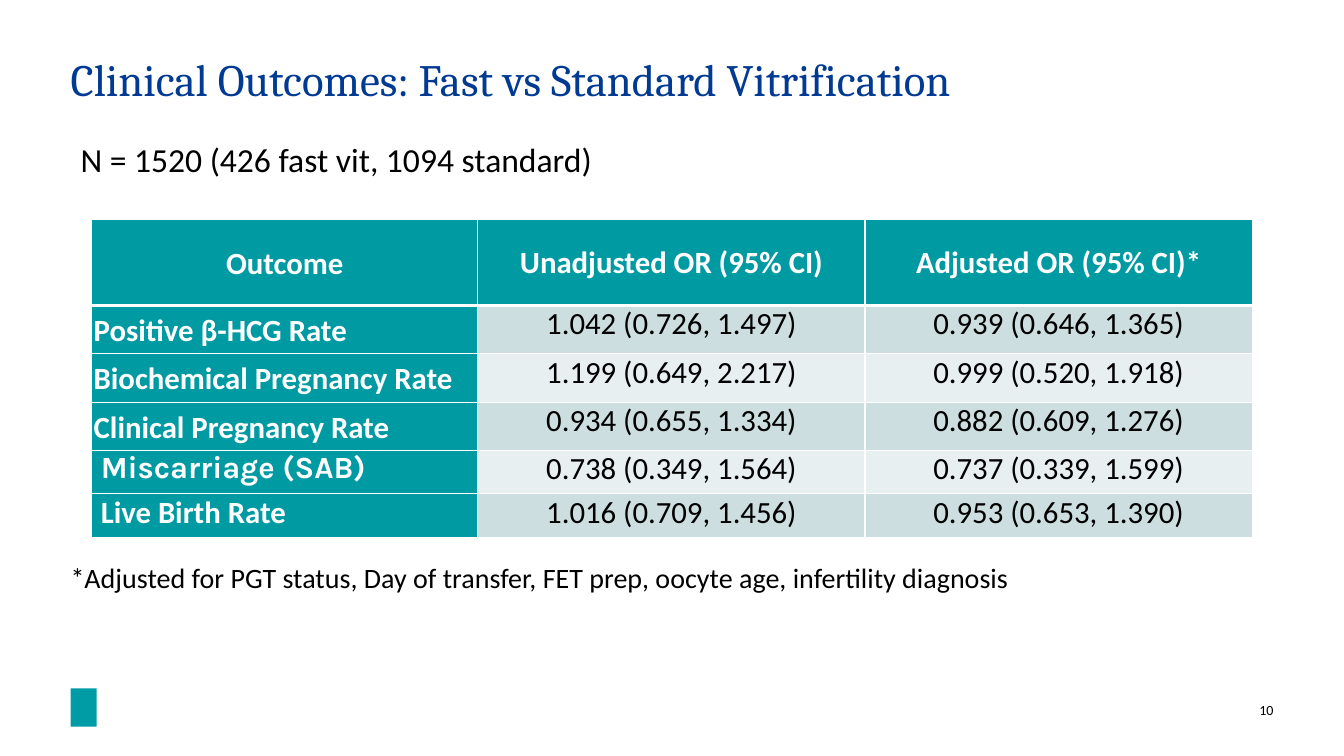
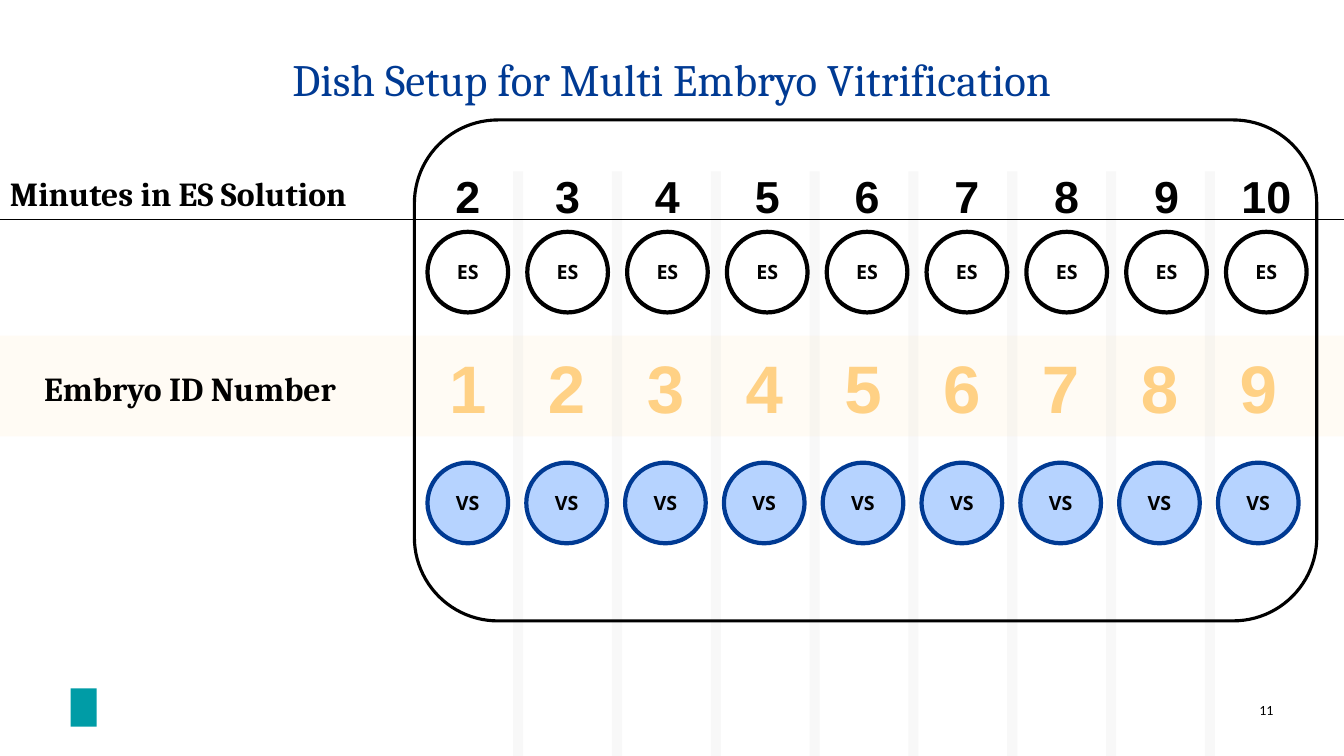
import pptx
import pptx.util
from lxml import etree
from pptx.dml.color import RGBColor
from pptx.enum.shapes import MSO_CONNECTOR, MSO_SHAPE
from pptx.enum.text import MSO_ANCHOR, PP_ALIGN
from pptx.oxml.ns import qn
from pptx.util import Inches, Pt

BLACK = RGBColor(0x00, 0x00, 0x00)
WHITE = RGBColor(0xFF, 0xFF, 0xFF)
NAVY = RGBColor(0x00, 0x3A, 0x93)
EMBLEM_TEAL = RGBColor(0x00, 0x9C, 0xA6)
TABLE_TEAL = RGBColor(0x00, 0x9A, 0xA3)
ROW_TINTS = RGBColor(0xCC, 0xDE, 0xE0), RGBColor(0xE7, 0xEF, 0xF0)
PALE_BLUE = RGBColor(0xB6, 0xD3, 0xFF)
ORANGE = RGBColor(0xFF, 0xD1, 0x85)
DARK_ORANGE = RGBColor(0xCD, 0x7F, 0x00)
CREAM = RGBColor(0xFF, 0xE8, 0xC2)
GREY = RGBColor(0xD9, 0xD9, 0xD9)

WIDTH, HEIGHT = 13.33, 7.5
MARGIN = 0.7
CONTENT_WIDTH = WIDTH - 2 * MARGIN

OUTCOMES_TITLE = "Clinical Outcomes: Fast vs Standard Vitrification"
SAMPLE = "N = 1520 (426 fast vit, 1094 standard)"
FOOTNOTE = "*Adjusted for PGT status, Day of transfer, FET prep, oocyte age, infertility diagnosis"
OUTCOMES = [
    ("Outcome", "Unadjusted OR (95% CI)", "Adjusted OR (95% CI)*"),
    ("Positive β-HCG Rate", "1.042 (0.726, 1.497)", "0.939 (0.646, 1.365)"),
    ("Biochemical Pregnancy Rate", "1.199 (0.649, 2.217)", "0.999 (0.520, 1.918)"),
    ("Clinical Pregnancy Rate", "0.934 (0.655, 1.334)", "0.882 (0.609, 1.276)"),
    ("Miscarriage (SAB)", "0.738 (0.349, 1.564)", "0.737 (0.339, 1.599)"),
    ("Live Birth Rate", "1.016 (0.709, 1.456)", "0.953 (0.653, 1.390)"),
]
ROW_HEIGHTS = [0.85, 0.48, 0.48, 0.48, 0.43, 0.43]
COLUMN_WIDTHS = [3.83, 3.84, 3.84]
TIGHT_ROWS = range(4)  # rows whose label cell has narrow margins
LABEL_FONTS = {"Miscarriage (SAB)": "Karla"}

DISH_TITLE = "Dish Setup for Multi Embryo Vitrification"
MINUTES = range(2, 11)
WELL_LEFT, WELL_SIZE = 4.24, 0.8
ES_PITCH, VS_PITCH = 0.99, 0.98
ID_WIDTH = 0.58


def style(paragraph, size, face="Calibri", color=BLACK, bold=False, align=PP_ALIGN.LEFT):
    paragraph.alignment = align
    font = paragraph.font
    font.size, font.name, font.bold = Pt(size), face, bold
    font.color.rgb = color


def set_margins(holder, x, y):
    holder.margin_left = holder.margin_right = Inches(x)
    holder.margin_top = holder.margin_bottom = Inches(y)


def add_text(shapes, text, box, size, margins=(0.1, 0.05), wrap=True, **look):
    frame = shapes.add_textbox(*map(Inches, box)).text_frame
    frame.word_wrap = wrap
    set_margins(frame, *margins)
    paragraph = frame.paragraphs[0]
    paragraph.text = str(text)
    style(paragraph, size, **look)
    return paragraph


def add_figure(shapes, kind, box, fill=None, line=None, weight=0, opacity=None):
    figure = shapes.add_shape(kind, *map(Inches, box))
    figure.shadow.inherit = False
    if fill is None:
        figure.fill.background()
    else:
        figure.fill.solid()
        figure.fill.fore_color.rgb = fill
    if opacity is not None:
        color = figure.element.spPr.find(qn("a:solidFill")).find(qn("a:srgbClr"))
        etree.SubElement(color, qn("a:alpha")).set("val", str(opacity * 1000))
    if line is None:
        figure.line.fill.background()
    else:
        figure.line.color.rgb = line
        figure.line.width = Pt(weight)
    return figure


def add_well(shapes, label, left, top, line, fill=None):
    box = left, top, WELL_SIZE, WELL_SIZE
    well = add_figure(shapes, MSO_SHAPE.OVAL, box, fill, line, 3)
    well.text_frame.vertical_anchor = MSO_ANCHOR.MIDDLE
    paragraph = well.text_frame.paragraphs[0]
    paragraph.text = label
    style(paragraph, 14, "Open Sans", bold=True, align=PP_ALIGN.CENTER)


def outline_element(tag, color, weight):
    line = etree.Element(qn(tag), w=str(Pt(weight)))
    fill = etree.SubElement(line, qn("a:solidFill"))
    etree.SubElement(fill, qn("a:srgbClr")).set("val", str(color))
    return line


def add_slide(deck, title, number, align):
    """Add a slide with the shared title, emblem and page number."""
    slide = deck.slides.add_slide(deck.slide_layouts[5])
    heading = slide.shapes.title
    heading.left, heading.top = Inches(MARGIN), Inches(0.57)
    heading.width, heading.height = Inches(CONTENT_WIDTH), Inches(1.05)
    frame = heading.text_frame
    set_margins(frame, 0, 0)
    frame.vertical_anchor = MSO_ANCHOR.TOP
    paragraph = frame.paragraphs[0]
    paragraph.text = title
    paragraph.line_spacing = 0.9
    style(paragraph, 32, "Cambria", NAVY, align=align)
    add_figure(slide.shapes, MSO_SHAPE.RECTANGLE, (MARGIN, 6.83, 0.26, 0.38), EMBLEM_TEAL)
    add_text(slide.shapes, number, (12.25, 6.96, 0.38, 0.17), 10, (0, 0), align=PP_ALIGN.RIGHT)
    return slide


def fill_cell(cell, text, row, column):
    header, label = row == 0, column == 0
    tight = label and row in TIGHT_ROWS
    cell.text = text
    paragraph = cell.text_frame.paragraphs[0]
    if tight:
        paragraph.line_spacing = 1.07
        set_margins(cell, 0.02, 0.02)
    else:
        set_margins(cell, 0.09, 0)
    cell.vertical_anchor = MSO_ANCHOR.MIDDLE if header or tight else MSO_ANCHOR.TOP
    strong = header or label
    style(paragraph, 22, LABEL_FONTS.get(text, "Calibri"), WHITE if strong else BLACK, strong,
          PP_ALIGN.LEFT if label and not header else PP_ALIGN.CENTER)
    cell.fill.solid()
    cell.fill.fore_color.rgb = TABLE_TEAL if strong else ROW_TINTS[(row - 1) % 2]
    weights = {"L": 1, "R": 1, "T": 3 if row == 1 else 1, "B": 3 if header else 1}
    properties = cell._tc.get_or_add_tcPr()
    for place, (side, weight) in enumerate(weights.items()):
        properties.insert(place, outline_element("a:ln" + side, WHITE, weight))


def build_outcomes(deck):
    shapes = add_slide(deck, OUTCOMES_TITLE, 10, PP_ALIGN.LEFT).shapes
    add_text(shapes, FOOTNOTE, (MARGIN, 5.56, CONTENT_WIDTH, 0.4), 20, (0, 0))
    box = 0.91, 2.18, sum(COLUMN_WIDTHS), sum(ROW_HEIGHTS)
    table = shapes.add_table(len(OUTCOMES), len(COLUMN_WIDTHS), *map(Inches, box)).table
    table.horz_banding = False
    for column, width in zip(table.columns, COLUMN_WIDTHS):
        column.width = Inches(width)
    for r, (texts, height) in enumerate(zip(OUTCOMES, ROW_HEIGHTS)):
        table.rows[r].height = Inches(height)
        for c, text in enumerate(texts):
            fill_cell(table.cell(r, c), text, r, c)
    add_text(shapes, SAMPLE, (MARGIN, 1.33, 9.61, 0.5), 24)


def build_dish(deck):
    shapes = add_slide(deck, DISH_TITLE, 11, PP_ALIGN.CENTER).shapes
    add_figure(shapes, MSO_SHAPE.RECTANGLE, (0, 3.33, WIDTH, 1), CREAM, opacity=17)
    for gap in range(len(MINUTES) - 1):
        box = 5.09 + gap * VS_PITCH, 1.7, 0.1, HEIGHT - 1.7
        add_figure(shapes, MSO_SHAPE.RECTANGLE, box, GREY, opacity=17)

    add_text(shapes, "Minutes in ES Solution", (0, 1.67, 4.45, 0.5), 24, face="Cambria", bold=True)
    add_text(shapes, "Embryo ID Number", (0.34, 3.6, 3.76, 0.5), 24, face="Cambria", bold=True)
    rule = shapes.add_connector(MSO_CONNECTOR.STRAIGHT, 0, Inches(2.18), Inches(WIDTH), Inches(2.18))
    rule.line.color.rgb = BLACK
    rule.line.width = Pt(1)
    etree.SubElement(rule.element.spPr, qn("a:effectLst"))

    for place, minute in enumerate(MINUTES):
        es_left = WELL_LEFT + place * ES_PITCH
        vs_left = WELL_LEFT + place * VS_PITCH
        timed_well = shapes.add_group_shape().shapes
        add_well(timed_well, "ES", es_left, 2.3, BLACK)
        add_text(timed_well, minute, (es_left, 1.62, WELL_SIZE, 0.64), 32,
                 face="Arial", bold=True, align=PP_ALIGN.CENTER)
        id_left = vs_left + (WELL_SIZE - ID_WIDTH) / 2
        embryo = add_text(shapes, place + 1, (id_left, 3.39, ID_WIDTH, 0.91), 48, wrap=False,
                          face="Arial", color=ORANGE, bold=True, align=PP_ALIGN.CENTER)
        embryo.runs[0]._r.get_or_add_rPr().insert(0, outline_element("a:ln", DARK_ORANGE, 1.75))
        add_well(shapes, "VS", vs_left, 4.59, NAVY, PALE_BLUE)
    add_figure(shapes, MSO_SHAPE.ROUNDED_RECTANGLE, (4.11, 1.19, 8.95, 4.97), line=BLACK, weight=2.25)


def main():
    deck = pptx.Presentation()
    deck.slide_width, deck.slide_height = Inches(WIDTH), Inches(HEIGHT)
    build_outcomes(deck)
    build_dish(deck)
    deck.save("out.pptx")


if __name__ == "__main__":
    main()
